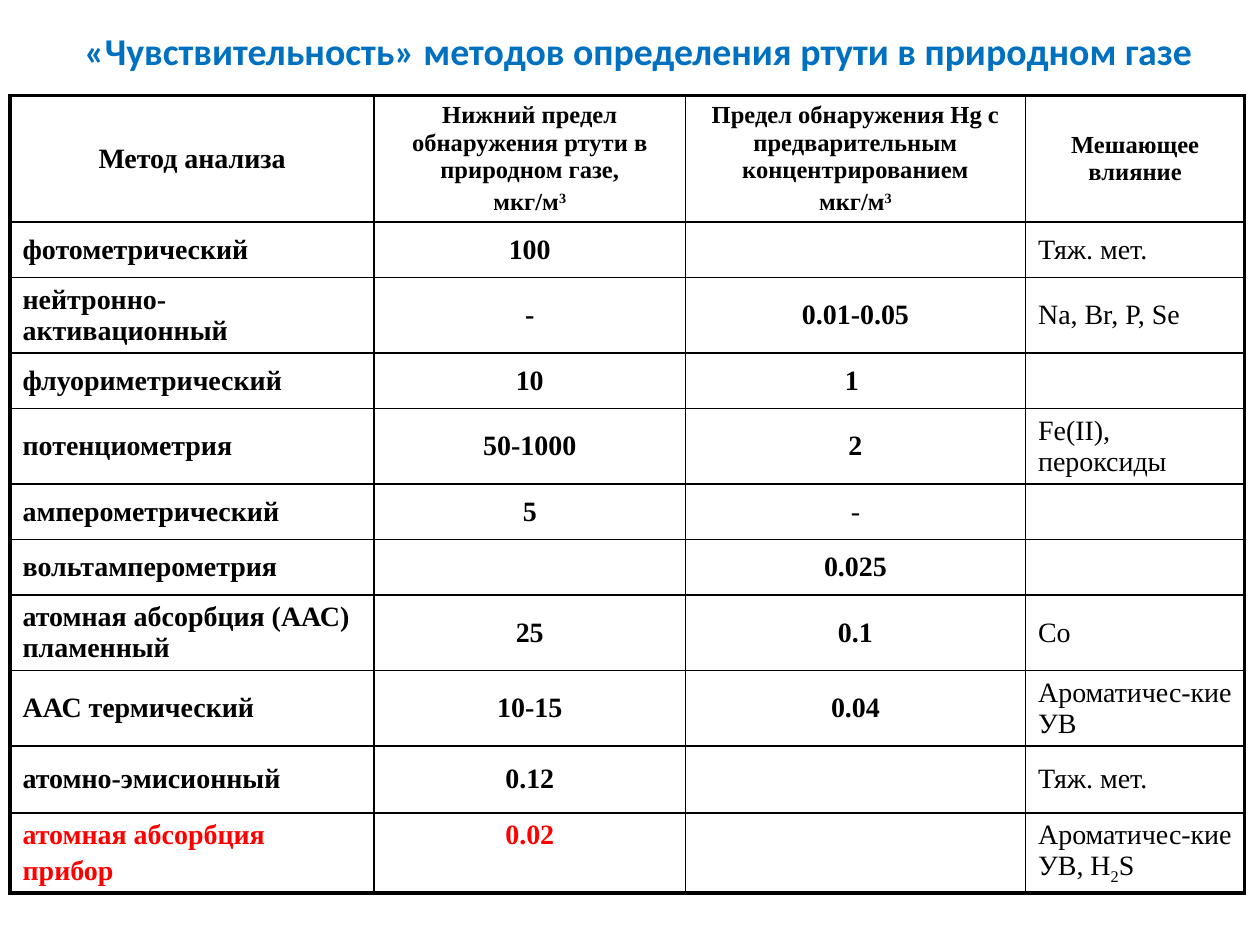
"""Builds a slide with a table comparing methods of mercury detection in natural gas."""
from lxml import etree
from pptx import Presentation
from pptx.dml.color import RGBColor
from pptx.enum.text import MSO_ANCHOR, MSO_AUTO_SIZE, PP_ALIGN
from pptx.oxml.ns import qn
from pptx.util import Inches, Pt

CENTER, LEFT = PP_ALIGN.CENTER, PP_ALIGN.LEFT
MIDDLE, TOP = MSO_ANCHOR.MIDDLE, MSO_ANCHOR.TOP
NO_AUTOFIT = MSO_AUTO_SIZE.NONE

THEME = {
    "title_font": "Calibri", "table_font": "Times New Roman",
    "title_size": 21.6, "header_size": 14, "body_size": 16,
    "title": "0070C0", "text": "000000", "accent": "FF0000", "border": "000000",
    "outer_line": 2.25, "inner_line": 1, "paragraph_gap": 3,
}

TITLE = "«Чувствительность» методов определения ртути в природном газе"
HEADER = (
    "Метод анализа",
    "Нижний предел обнаружения ртути в природном газе,\nмкг/м³",
    "Предел обнаружения Hg с предварительным концентрированием\nмкг/м³",
    "Мешающее влияние",
)
METHODS = [
    ("фотометрический", "100", "", "Тяж. мет."),
    ("нейтронно-активационный", "-", "0.01-0.05", "Na, Br, P, Se"),
    ("флуориметрический", "10", "1 ", ""),
    ("потенциометрия", "50-1000", "2", "Fe(II), пероксиды"),
    ("амперометрический", "5", "-", ""),
    ("вольтамперометрия", "", "0.025", ""),
    ("атомная абсорбция (ААС) пламенный", "25", "0.1", "Co"),
    ("ААС термический", "10-15", "0.04", "Ароматичес-кие УВ"),
    ("атомно-эмисионный", "0.12", "", "Тяж. мет."),
    ("атомная абсорбция\nприбор", "0.02", "", "Ароматичес-кие УВ, H₂S"),
]
COLUMN_WIDTHS = (2.89, 2.47, 2.7, 1.74)
ROW_HEIGHTS = (0.99, 0.44, 0.6, 0.44, 0.6, 0.44, 0.44, 0.6, 0.6, 0.53, 0.63)
BASELINES = {"³": ("3", 30000), "₂": ("2", -25000)}


def format_font(font, name, size, color, bold):
    font.name, font.size, font.bold = name, Pt(size), bold
    font.color.rgb = RGBColor.from_string(color)


def split_baselines(line):
    parts = []
    for char in line:
        if char in BASELINES:
            parts.append(BASELINES[char])
        elif parts and parts[-1][1] == 0:
            parts[-1] = (parts[-1][0] + char, 0)
        else:
            parts.append((char, 0))
    return parts


def write_cell(cell, text, align, size, color, bold):
    frame = cell.text_frame
    for index, line in enumerate(text.split("\n")):
        paragraph = frame.add_paragraph() if index else frame.paragraphs[0]
        paragraph.alignment = align
        if index:
            paragraph.space_before = Pt(THEME["paragraph_gap"])
        for part, baseline in split_baselines(line):
            run = paragraph.add_run()
            run.text = part
            format_font(run.font, THEME["table_font"], size, color, bold)
            if baseline:
                run._r.get_or_add_rPr().set("baseline", str(baseline))


def set_borders(cell, outer_sides):
    properties = cell._tc.get_or_add_tcPr()
    for position, (side, is_outer) in enumerate(outer_sides.items()):
        width = THEME["outer_line"] if is_outer else THEME["inner_line"]
        border = etree.Element(qn(f"a:{side}"), w=str(Pt(width)))
        fill = etree.SubElement(border, qn("a:solidFill"))
        etree.SubElement(fill, qn("a:srgbClr"), val=THEME["border"])
        properties.insert(position, border)


def add_title(slide):
    title = slide.shapes.title
    title.left, title.top = Inches(0.41), Inches(0.21)
    title.width, title.height = Inches(9.32), Inches(0.38)
    frame = title.text_frame
    frame.text = TITLE
    frame.word_wrap, frame.auto_size = True, NO_AUTOFIT
    frame.vertical_anchor = MIDDLE
    paragraph = frame.paragraphs[0]
    paragraph.alignment = CENTER
    format_font(paragraph.runs[0].font, THEME["title_font"], THEME["title_size"],
                THEME["title"], True)


def add_methods_table(slide):
    rows = [HEADER, *METHODS]
    last_row, last_column = len(rows) - 1, len(HEADER) - 1
    table = slide.shapes.add_table(
        len(rows), len(HEADER), Inches(0.08), Inches(0.76),
        Inches(sum(COLUMN_WIDTHS)), Inches(sum(ROW_HEIGHTS))).table
    table.first_row = table.horz_banding = False
    for column, width in zip(table.columns, COLUMN_WIDTHS):
        column.width = Inches(width)
    for table_row, height in zip(table.rows, ROW_HEIGHTS):
        table_row.height = Inches(height)

    for r, row in enumerate(rows):
        for c, text in enumerate(row):
            cell = table.cell(r, c)
            is_header, is_influence = r == 0, c == last_column
            cell.fill.background()
            cell.vertical_anchor = TOP if r == last_row else MIDDLE
            set_borders(cell, {"lnL": c == 0, "lnR": is_influence,
                               "lnT": is_header, "lnB": r == last_row})
            if not text:
                continue
            small = is_header and c > 0
            plain = not is_header and (is_influence or (c == 2 and text == "-"))
            accented = r == last_row and not is_influence
            write_cell(
                cell, text,
                CENTER if is_header or 0 < c < last_column else LEFT,
                THEME["header_size" if small else "body_size"],
                THEME["accent" if accented else "text"], not plain)


def main():
    presentation = Presentation()
    presentation.slide_width, presentation.slide_height = Inches(10), Inches(7.5)
    slide = presentation.slides.add_slide(presentation.slide_layouts[5])
    add_title(slide)
    add_methods_table(slide)
    presentation.save("out.pptx")


if __name__ == "__main__":
    main()
